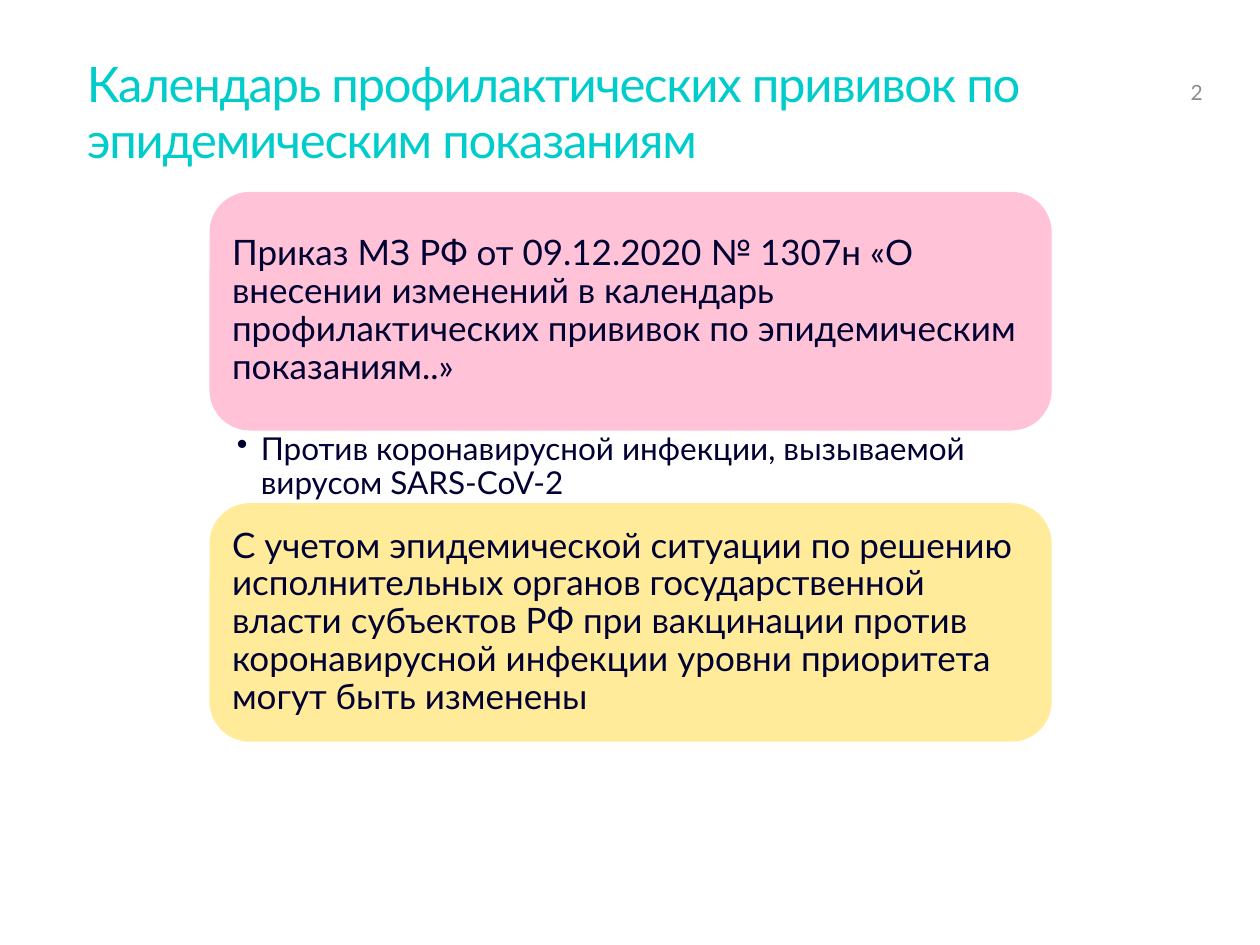
from dataclasses import dataclass

from lxml.etree import SubElement
from pptx import Presentation
from pptx.dml.color import RGBColor
from pptx.enum.shapes import MSO_SHAPE
from pptx.enum.text import MSO_ANCHOR as Anchor, PP_ALIGN as Align
from pptx.oxml.ns import qn
from pptx.util import Inches, Length, Pt

TEAL = RGBColor(0x00, 0xCC, 0xCC)
GREY = RGBColor(0x8C, 0x8C, 0x90)
NAVY = RGBColor(0x00, 0x00, 0x33)
PINK = RGBColor(0xFF, 0xC2, 0xD6)
YELLOW = RGBColor(0xFF, 0xEB, 0x99)
FONT = "Lato"
CARD_LEFT, CARD_WIDTH, CARD_HEIGHT = 1.67, 6.67, 1.88


@dataclass(frozen=True)
class Card:
    top: float
    color: RGBColor
    text: str


CARDS = (
    Card(1.53, PINK, "Приказ МЗ РФ от 09.12.2020 № 1307н «О внесении изменений в календарь "
                     "профилактических прививок по эпидемическим показаниям..»"),
    Card(4, YELLOW, "С учетом эпидемической ситуации по решению исполнительных органов "
                    "государственной власти субъектов РФ при вакцинации против "
                    "коронавирусной инфекции уровни приоритета могут быть изменены"),
)


def write_text(shape, text: str, *, size: float, color: RGBColor,
               margins: tuple[float, float, float, float],
               anchor: Anchor = Anchor.TOP, line_spacing: float | Length = 1.0,
               tracking: float = 0, bullet_indent: float = 0) -> None:
    frame = shape.text_frame
    frame.word_wrap = True
    frame.vertical_anchor = anchor
    (frame.margin_left, frame.margin_top,
     frame.margin_right, frame.margin_bottom) = map(Inches, margins)
    paragraph = frame.paragraphs[0]
    paragraph.alignment = Align.LEFT
    paragraph.line_spacing = line_spacing
    if bullet_indent:
        properties = paragraph._p.get_or_add_pPr()
        properties.set("marL", str(Inches(bullet_indent)))
        properties.set("indent", str(-Inches(bullet_indent)))
        SubElement(properties, qn("a:buChar")).set("char", "•")
    run = paragraph.add_run()
    run.text = text
    run.font.name = FONT
    run.font.size = Pt(size)
    run.font.color.rgb = color
    if tracking:
        run._r.get_or_add_rPr().set("spc", str(round(tracking * 100)))


def add_text(slide, left: float, top: float, width: float, height: float,
             text: str, **text_format) -> None:
    box = slide.shapes.add_textbox(*map(Inches, (left, top, width, height)))
    write_text(box, text, **text_format)


def add_card(slide, card: Card) -> None:
    shape = slide.shapes.add_shape(
        MSO_SHAPE.ROUNDED_RECTANGLE,
        *map(Inches, (CARD_LEFT, card.top, CARD_WIDTH, CARD_HEIGHT)))
    shape.shadow.inherit = False
    shape.fill.solid()
    shape.fill.fore_color.rgb = card.color
    shape.line.color.rgb = card.color
    shape.line.width = Pt(1)
    write_text(shape, card.text, size=20, color=NAVY, margins=(0.08,) * 4,
               anchor=Anchor.MIDDLE, line_spacing=0.9)


def main() -> None:
    """Build the slide on the vaccination calendar for epidemic indications."""
    presentation = Presentation()
    presentation.slide_width, presentation.slide_height = Inches(10), Inches(7.5)
    slide = presentation.slides.add_slide(presentation.slide_layouts[6])
    add_text(slide, 0.69, 0.4, 8.62, 1.03,
             "Календарь профилактических прививок по эпидемическим показаниям",
             size=28, color=TEAL, margins=(0, 0.05, 0, 0.05),
             line_spacing=Pt(32), tracking=-0.7)
    add_text(slide, 9.45, 0.4, 0.38, 0.47, "2", size=12, color=GREY,
             margins=(0, 0.04, 0, 0.04), anchor=Anchor.BOTTOM)
    for card in CARDS:
        add_card(slide, card)
    add_text(slide, CARD_LEFT, CARDS[0].top + CARD_HEIGHT, CARD_WIDTH, 0.6,
             "Против коронавирусной инфекции, вызываемой вирусом SARS-CoV-2",
             size=18, color=NAVY, margins=(0.21, 0.03, 0.14, 0.03),
             line_spacing=0.9, bullet_indent=0.19)
    presentation.save("out.pptx")


if __name__ == "__main__":
    main()
